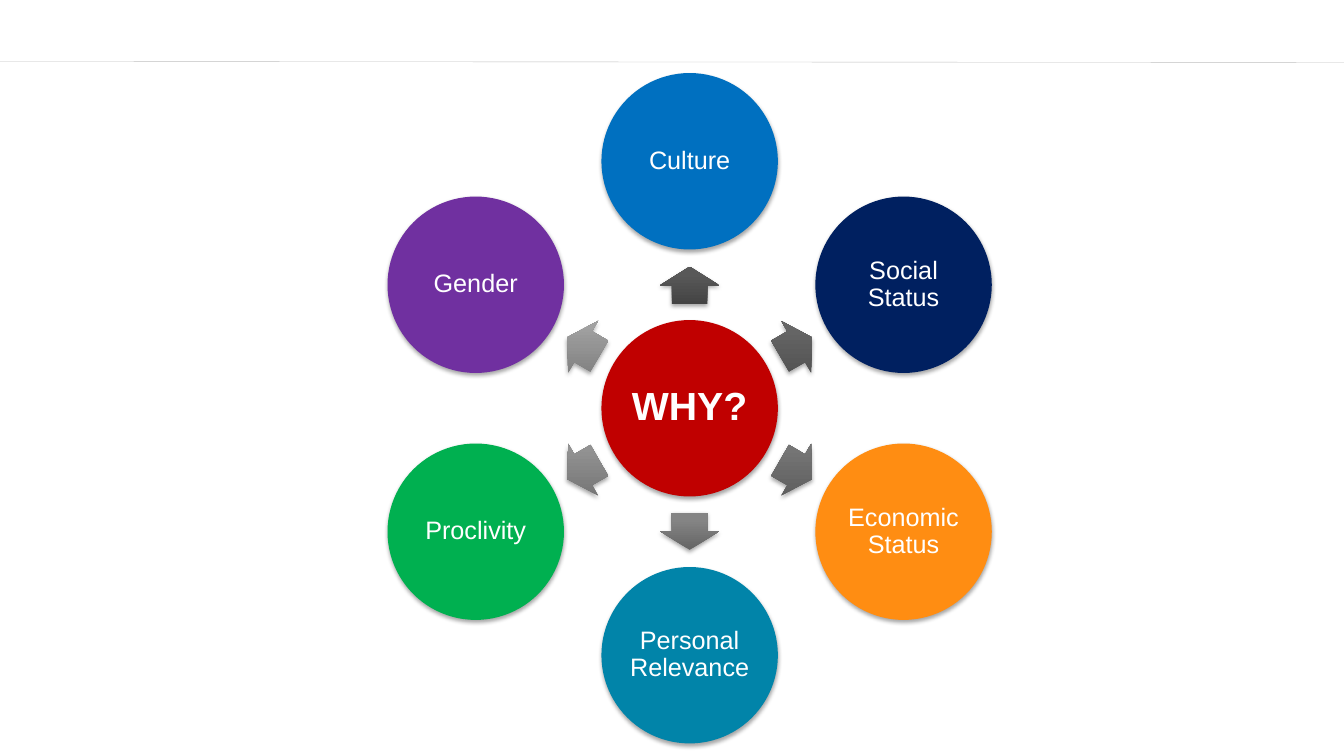
"""Build a slide with six influences radiating from a central question."""
import math

from lxml import etree
from pptx import Presentation, util as u
from pptx.dml.color import RGBColor
from pptx.enum import shapes, text
from pptx.oxml import ns

COLORS = {
    "rule": "BFBFBF", "shadow": "000000", "text": "FFFFFF", "why": "C00000",
    "culture": "0070C0", "social": "002060", "economic": "FF8D12",
    "personal": "0184A9", "proclivity": "00B050", "gender": "7030A0",
    "arrow_culture": ("444444", "585858"),
    "arrow_social": ("4F4F4F", "676767"),
    "arrow_economic": ("5A5A5A", "757575"),
    "arrow_personal": ("656565", "848484"),
    "arrow_proclivity": ("717171", "929292"),
    "arrow_gender": ("7C7C7C", "A1A1A1"),
}
INFLUENCES = [
    ("culture", "Culture"), ("social", "Social Status"),
    ("economic", "Economic Status"), ("personal", "Personal Relevance"),
    ("proclivity", "Proclivity"), ("gender", "Gender"),
]
CENTER_X, CENTER_Y = 6.84, 4.05
DIAMETER = 1.75
CIRCLE_ORBIT, ARROW_ORBIT = 2.45, 1.22
ARROW_LENGTH, ARROW_WIDTH = 0.37, 0.59


def rgb(value):
    return RGBColor.from_string(value)


def add_shadow(properties, distance, opacity):
    effects = properties.find(ns.qn("a:effectLst"))
    if effects is None:
        effects = etree.SubElement(properties, ns.qn("a:effectLst"))
    shadow = etree.SubElement(
        effects, ns.qn("a:outerShdw"), blurRad=str(u.Pt(3.1)),
        dist=str(u.Pt(distance)), dir="5400000", rotWithShape="0")
    color = etree.SubElement(shadow, ns.qn("a:srgbClr"), val=COLORS["shadow"])
    etree.SubElement(color, ns.qn("a:alpha"), val=str(opacity * 1000))


def add_centered(slide, kind, x, y, width, height):
    part = slide.shapes.add_shape(
        kind, u.Inches(x - width / 2), u.Inches(y - height / 2),
        u.Inches(width), u.Inches(height))
    part.line.fill.background()
    part.shadow.inherit = False
    add_shadow(part._element.spPr, 1.8, 35)
    return part


def write_text(frame, wording, size=18, bold=False):
    frame.word_wrap = True
    frame.vertical_anchor = text.MSO_ANCHOR.MIDDLE
    frame.margin_left = frame.margin_right = u.Inches(0)
    frame.margin_top = frame.margin_bottom = u.Inches(0)
    paragraph = frame.paragraphs[0]
    paragraph.alignment = text.PP_ALIGN.CENTER
    paragraph.line_spacing = 0.9
    run = paragraph.add_run()
    run.text = wording
    run.font.name = "Arial"
    run.font.size = u.Pt(size)
    run.font.bold = bold
    run.font.color.rgb = rgb(COLORS["text"])


def add_circle(slide, x, y, color, wording, **text_format):
    circle = add_centered(
        slide, shapes.MSO_SHAPE.OVAL, x, y, DIAMETER, DIAMETER)
    circle.fill.solid()
    circle.fill.fore_color.rgb = rgb(color)
    write_text(circle.text_frame, wording, **text_format)


def add_arrow(slide, x, y, rotation, gradient):
    arrow = add_centered(
        slide, shapes.MSO_SHAPE.RIGHT_ARROW, x, y, ARROW_LENGTH, ARROW_WIDTH)
    arrow.rotation = rotation
    arrow.adjustments[0] = 0.6
    arrow.adjustments[1] = 0.5
    arrow.fill.gradient()
    arrow.fill.gradient_angle = 90
    for stop, color, position in zip(
            arrow.fill.gradient_stops, gradient, (0, 0.8)):
        stop.color.rgb = rgb(color)
        stop.position = position
    arrow._element.spPr.find(ns.qn("a:gradFill")).set("rotWithShape", "0")


def add_rule(slide):
    rule = slide.shapes.add_connector(
        shapes.MSO_CONNECTOR.STRAIGHT, u.Inches(0), u.Inches(0.61),
        u.Inches(13.33), u.Inches(0.62))
    rule.line.color.rgb = rgb(COLORS["rule"])
    rule.line.width = u.Pt(0.25)
    add_shadow(rule._element.spPr, 1.6, 38)


def main():
    deck = Presentation()
    deck.slide_width, deck.slide_height = u.Inches(13.33), u.Inches(7.5)
    slide = deck.slides.add_slide(deck.slide_layouts[6])
    add_rule(slide)
    add_circle(slide, CENTER_X, CENTER_Y, COLORS["why"], "WHY?",
               size=28, bold=True)
    for index, (influence, wording) in enumerate(INFLUENCES):
        rotation = (270 + 60 * index) % 360
        across = math.cos(math.radians(rotation))
        down = math.sin(math.radians(rotation))
        add_arrow(slide, CENTER_X + ARROW_ORBIT * across,
                  CENTER_Y + ARROW_ORBIT * down, rotation,
                  COLORS["arrow_" + influence])
        add_circle(slide, CENTER_X + CIRCLE_ORBIT * across,
                   CENTER_Y + CIRCLE_ORBIT * down, COLORS[influence], wording)
    deck.save("out.pptx")


if __name__ == "__main__":
    main()
